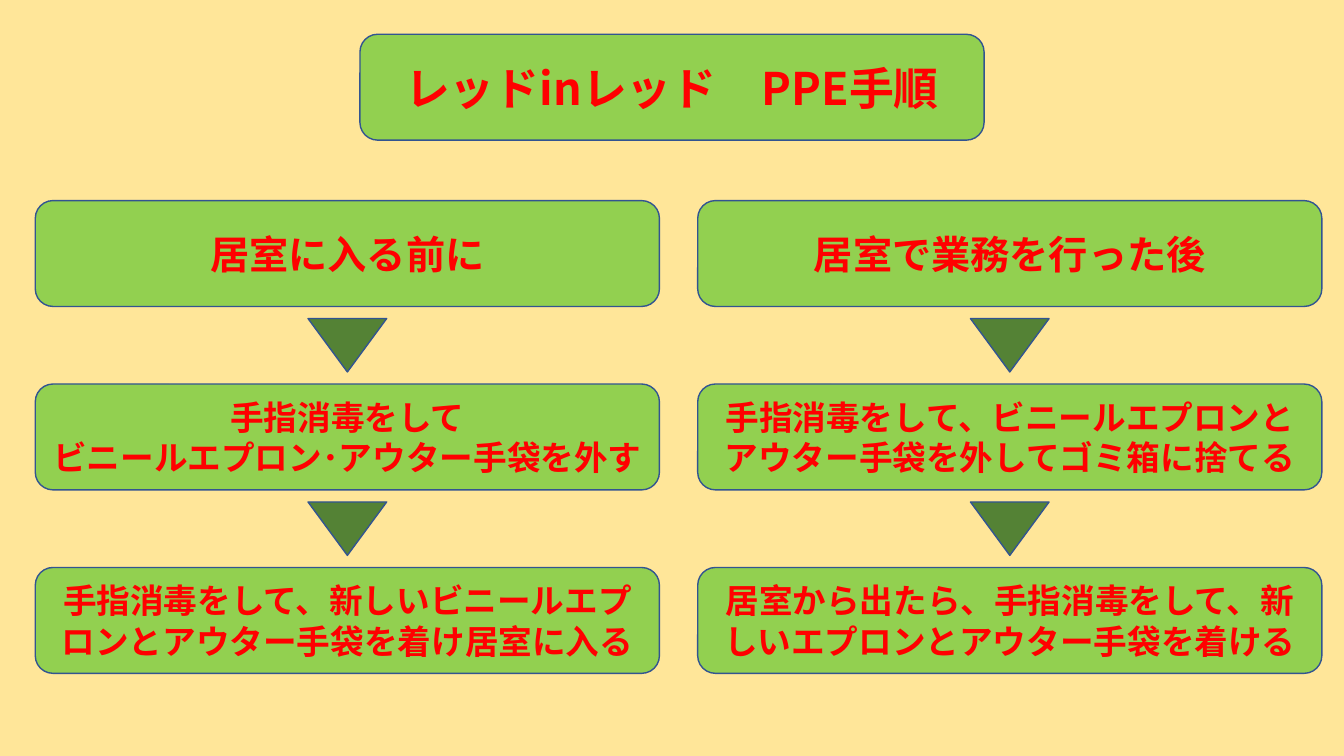
from lxml import etree
from pptx import Presentation
from pptx.dml.color import RGBColor
from pptx.enum.shapes import MSO_SHAPE
from pptx.enum.text import MSO_ANCHOR, MSO_AUTO_SIZE, PP_ALIGN
from pptx.oxml.ns import qn
from pptx.util import Inches, Pt

ROUNDED = MSO_SHAPE.ROUNDED_RECTANGLE
TRIANGLE = MSO_SHAPE.ISOSCELES_TRIANGLE
MIDDLE = MSO_ANCHOR.MIDDLE
NO_FIT = MSO_AUTO_SIZE.NONE
CENTER = PP_ALIGN.CENTER

BOX_WIDTH, BOX_HEIGHT = 6.19, 1.05
ARROW_WIDTH, ARROW_HEIGHT = 0.78, 0.53
TITLE_LEFT, TITLE_TOP = 3.57, 0.34
FIRST_TOP, ROW_PITCH = 1.99, 1.82
ARROW_OFFSET = 1.17
HEADING_SIZE, STEP_SIZE = 28, 24

COLUMNS = [
    (0.35, [
        ["居室に入る前に"],
        ["手指消毒をして", "ビニールエプロン･アウター手袋を外す"],
        ["手指消毒をして、新しいビニールエプロンとアウター手袋を着け居室に入る"],
    ]),
    (6.92, [
        ["居室で業務を行った後"],
        ["手指消毒をして、ビニールエプロンと", "アウター手袋を外してゴミ箱に捨てる"],
        ["居室から出たら、手指消毒をして、新しいエプロンとアウター手袋を着ける"],
    ]),
]


def color(value):
    """Turn a hex string into a colour."""
    return RGBColor.from_string(value)


def write(frame, lines, size=24, font="Noto Sans CJK JP", ink="FF0000", bold=True):
    """Fill a text frame with centred, formatted paragraphs."""
    frame.word_wrap = True
    frame.auto_size = NO_FIT
    frame.vertical_anchor = MIDDLE
    for index, line in enumerate(lines):
        para = frame.add_paragraph() if index else frame.paragraphs[0]
        para.alignment = CENTER
        span = para.add_run()
        span.text = line
        span.font.name = font
        span.font.size = Pt(size)
        span.font.bold = bold
        span.font.color.rgb = color(ink)
        east_asian = etree.SubElement(span.font._element, qn("a:ea"))
        east_asian.set("typeface", font)


class ProcedurePage:
    """Holds the style and the slide of the procedure."""

    background = "FFE699"
    box_fill = "92D050"
    arrow_fill = "548235"
    outline = "325491"

    def __init__(self, deck):
        """Add a title-only slide with a plain background."""
        self.page = deck.slides.add_slide(deck.slide_layouts[5])
        fill = self.page.background.fill
        fill.solid()
        fill.fore_color.rgb = color(self.background)

    def shape(self, kind, left, top, width, height, fill):
        """Draw an outlined preset shape."""
        shape = self.page.shapes.add_shape(
            kind, Inches(left), Inches(top), Inches(width), Inches(height))
        shape.shadow.inherit = False
        shape.fill.solid()
        shape.fill.fore_color.rgb = color(fill)
        shape.line.color.rgb = color(self.outline)
        shape.line.width = Pt(1)
        return shape

    def box(self, left, top):
        """Draw a rounded box."""
        return self.shape(ROUNDED, left, top, BOX_WIDTH, BOX_HEIGHT, self.box_fill)

    def title(self, text, left, top):
        """Place the title on a rounded box."""
        box = self.box(left, top)
        title = self.page.shapes.title
        title.left, title.top = box.left, box.top
        title.width, title.height = box.width, box.height
        write(title.text_frame, [text], size=32)
        box.element.addnext(title.element)

    def step(self, lines, left, top, size):
        """Draw one step of a procedure."""
        write(self.box(left, top).text_frame, lines, size=size)

    def arrow(self, left, top):
        """Draw a triangle pointing down, centred under a box."""
        middle = left + (BOX_WIDTH - ARROW_WIDTH) / 2
        arrow = self.shape(
            TRIANGLE, middle, top, ARROW_WIDTH, ARROW_HEIGHT, self.arrow_fill)
        arrow.rotation = 180


def main():
    """Build and save the deck."""
    deck = Presentation()
    deck.slide_width, deck.slide_height = Inches(13.33), Inches(7.5)
    page = ProcedurePage(deck)
    page.title("レッドinレッド　PPE手順", TITLE_LEFT, TITLE_TOP)
    for left, steps in COLUMNS:
        for row, lines in enumerate(steps):
            top = FIRST_TOP + row * ROW_PITCH
            page.step(lines, left, top, STEP_SIZE if row else HEADING_SIZE)
            if row < len(steps) - 1:
                page.arrow(left, top + ARROW_OFFSET)
    deck.save("out.pptx")


if __name__ == "__main__":
    main()
